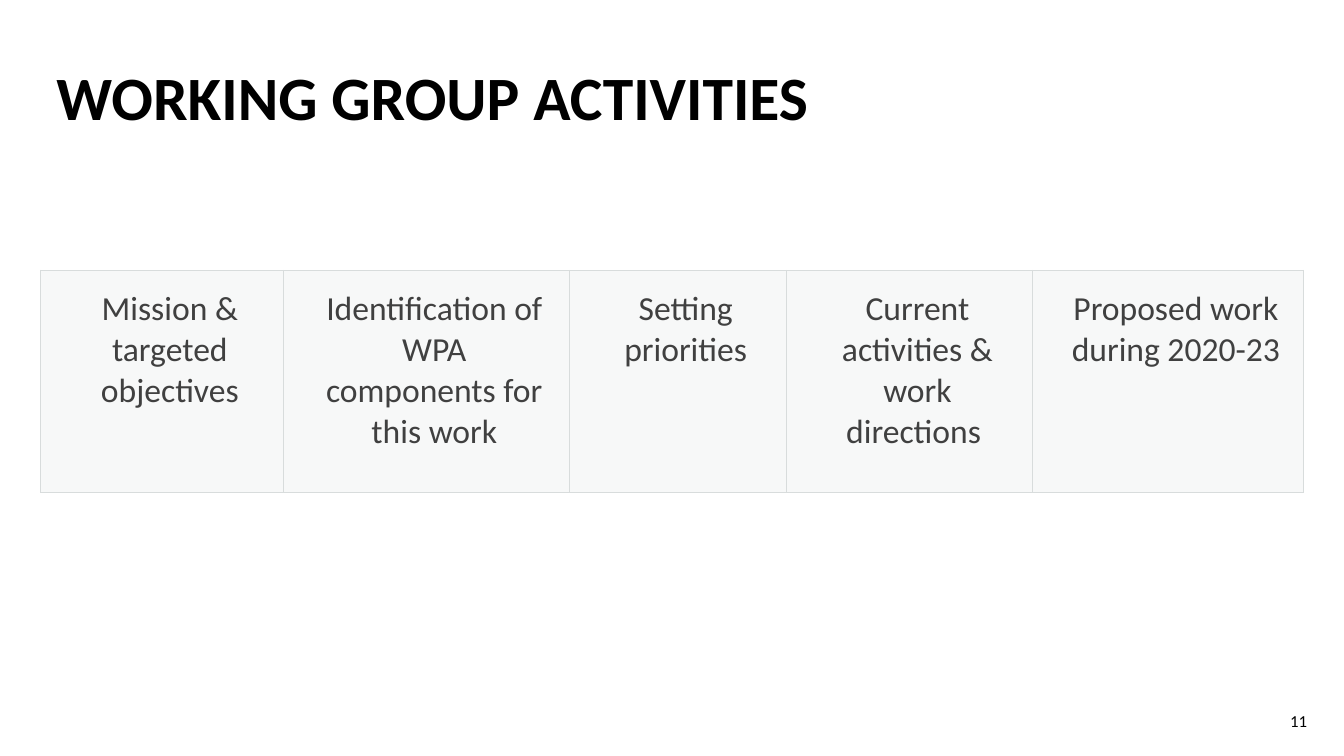
from lxml.etree import SubElement
from pptx import Presentation
from pptx.dml.color import RGBColor
from pptx.enum.text import MSO_ANCHOR, PP_ALIGN
from pptx.oxml import parse_xml
from pptx.oxml.ns import nsdecls, qn
from pptx.util import Cm, Pt

BLACK = RGBColor(0x00, 0x00, 0x00)
GREY = RGBColor(0x40, 0x40, 0x40)
PALE = RGBColor(0xD8, 0xDE, 0xDC)
EDGE = RGBColor(0xD8, 0xDC, 0xDC)
FONT = "Calibri"

TOPICS = [
    ("Mission & targeted objectives", 6.12),
    ("Identification of WPA components for this work", 7.21),
    ("Setting priorities", 5.46),
    ("Current activities & work directions ", 6.22),
    ("Proposed work during 2020-23", 6.81),
]


def add_run(para, text, size, color, bold=False):
    run = para.add_run()
    run.text = text
    font = run.font
    font.name, font.size, font.bold = FONT, Pt(size), bold
    font.color.rgb = color


def add_text(slide, box, text, size, align, bold=False):
    """Add a one-line text box and return its frame and paragraph."""
    frame = slide.shapes.add_textbox(*map(Cm, box)).text_frame
    frame.word_wrap = True
    frame.vertical_anchor = MSO_ANCHOR.MIDDLE
    para = frame.paragraphs[0]
    para.alignment = align
    add_run(para, text, size, BLACK, bold)
    return frame, para


def add_title(slide, text):
    _, para = add_text(slide, (1.17, 1.35, 31.83, 2.39), text, 44,
                       PP_ALIGN.LEFT, bold=True)
    para.line_spacing = 0.9
    para.space_after = Pt(6)


def add_number(slide, text):
    frame, _ = add_text(slide, (31.85, 17.65, 1.42, 1.02), text, 12,
                        PP_ALIGN.RIGHT)
    frame.margin_left = frame.margin_right = Cm(0.33)
    frame.margin_top = frame.margin_bottom = Cm(0.18)


def add_edges(cell, sides):
    """Draw thin borders; they must come before the fill in the cell's XML."""
    for place, side in enumerate(sides):
        line = parse_xml(
            f'<a:ln{side} {nsdecls("a")} w="{Pt(0.75)}"><a:solidFill>'
            f'<a:srgbClr val="{EDGE}"/></a:solidFill></a:ln{side}>')
        cell._tc.get_or_add_tcPr().insert(place, line)


def fill_cell(cell, text):
    cell.margin_left, cell.margin_right = Cm(0.91), Cm(0.51)
    cell.margin_top = cell.margin_bottom = Cm(0.46)
    para = cell.text_frame.paragraphs[0]
    para.alignment = PP_ALIGN.CENTER
    add_run(para, text, 24, GREY)
    cell.fill.solid()
    cell.fill.fore_color.rgb = PALE
    tint = cell._tc.tcPr.find(".//" + qn("a:srgbClr"))
    SubElement(tint, qn("a:alpha"), val="20000")
    add_edges(cell, "LRTB")


def add_topics(slide):
    width = sum(size for _, size in TOPICS)
    table = slide.shapes.add_table(2, len(TOPICS), Cm(1.02), Cm(4.37),
                                   Cm(width), Cm(8.03)).table
    table.first_row = table.horz_banding = False
    table.rows[0].height, table.rows[1].height = Cm(2.44), Cm(5.59)
    for col, (text, size) in enumerate(TOPICS):
        table.columns[col].width = Cm(size)
        head = table.cell(0, col)
        head.fill.background()
        add_edges(head, "B")
        fill_cell(table.cell(1, col), text)


def main():
    deck = Presentation()
    deck.slide_width, deck.slide_height = Cm(33.87), Cm(19.05)
    slide = deck.slides.add_slide(deck.slide_layouts[6])
    add_number(slide, "11")
    add_title(slide, "WORKING GROUP ACTIVITIES")
    add_topics(slide)
    deck.save("out.pptx")


if __name__ == "__main__":
    main()
